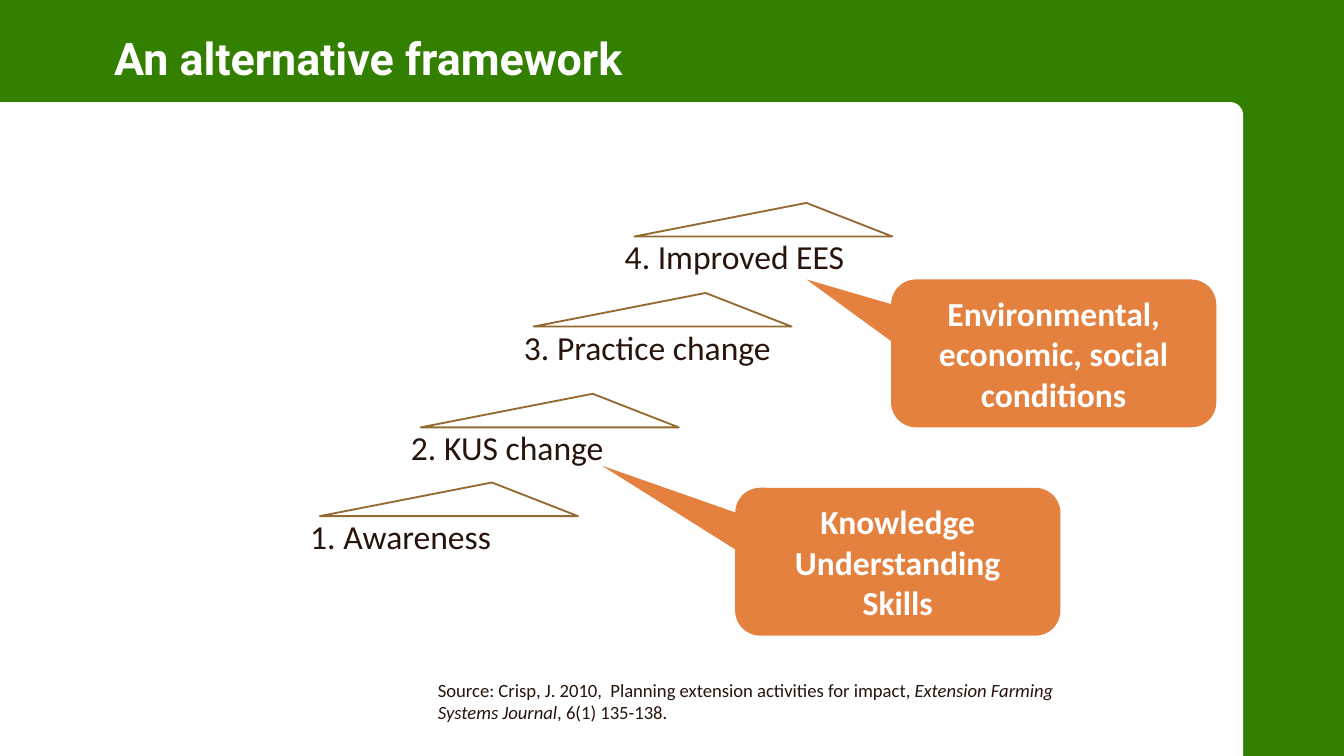
"""Build the slide on an alternative framework of four rising steps."""
from pptx import Presentation
from pptx.dml.color import RGBColor
from pptx.enum.shapes import MSO_SHAPE
from pptx.enum.text import MSO_ANCHOR, MSO_AUTO_SIZE, PP_ALIGN
from pptx.util import Inches, Pt

PANEL = MSO_SHAPE.ROUND_1_RECTANGLE
CALLOUT = MSO_SHAPE.ROUNDED_RECTANGULAR_CALLOUT
TOP, MIDDLE = MSO_ANCHOR.TOP, MSO_ANCHOR.MIDDLE
NO_FIT = MSO_AUTO_SIZE.NONE
GROW = MSO_AUTO_SIZE.SHAPE_TO_FIT_TEXT
LEFT, CENTER = PP_ALIGN.LEFT, PP_ALIGN.CENTER

GREEN, WHITE, ORANGE = "338000", "FFFFFF", "E4813F"
BROWN, INK = "946A32", "28140A"

STEPS = [
    ("1. Awareness", 2.21, 3.79, 1.55),
    ("2. KUS change", 2.96, 3.13, 1.64),
    ("3. Practice change", 3.8, 2.38, 2.05),
    ("4. Improved EES", 4.55, 1.71, 1.95),
]
CALLOUTS = [
    (["Knowledge", "Understanding", "Skills"], 5.47, 3.63, (-0.91, -0.65, 0.17)),
    (["Environmental, economic, social conditions"], 6.63, 2.08, (-0.76, -0.5, 0.17)),
]
SOURCE = [
    ("Source: Crisp, J. 2010,  Planning extension activities for impact, ", False),
    ("Extension Farming Systems Journal", True),
    (", 6(1) 135-138.", False),
]


def rgb(value):
    return RGBColor.from_string(value)


class Deck:
    def __init__(self, slide):
        self.s = slide
        fill = slide.background.fill
        fill.solid()
        fill.fore_color.rgb = rgb(GREEN)

    def style(self, p, size, color, font="Calibri", bold=False, align=LEFT):
        p.alignment = align
        p.font.name = font
        p.font.size = Pt(size)
        p.font.bold = bold
        p.font.color.rgb = rgb(color)

    def title(self, text, *box):
        sp = self.s.shapes.title
        sp.left, sp.top, sp.width, sp.height = map(Inches, box)
        tf = sp.text_frame
        tf.text = text
        tf.vertical_anchor = TOP
        tf.auto_size = NO_FIT
        p = tf.paragraphs[0]
        p.line_spacing = 1.1
        self.style(p, 24, WHITE, "Roboto", True)

    def shape(self, kind, box, color, adjustments):
        sp = self.s.shapes.add_shape(kind, *map(Inches, box))
        sp.shadow.inherit = False
        sp.fill.solid()
        sp.fill.fore_color.rgb = rgb(color)
        sp.line.fill.background()
        for i, value in enumerate(adjustments):
            sp.adjustments[i] = value
        return sp

    def text_box(self, box, wrap):
        tf = self.s.shapes.add_textbox(*map(Inches, box)).text_frame
        tf.word_wrap = wrap
        tf.auto_size = GROW
        return tf

    def step(self, label, x, y, width):
        left, base = x + 0.17, y + 0.05
        builder = self.s.shapes.build_freeform(Inches(left), Inches(base))
        corners = [(left + 1.92, base), (left + 1.28, base - 0.25)]
        builder.add_line_segments([(Inches(a), Inches(b)) for a, b in corners], close=True)
        sp = builder.convert_to_shape()
        sp.shadow.inherit = False
        sp.fill.background()
        sp.line.color.rgb = rgb(BROWN)
        sp.line.width = Pt(1)
        tf = self.text_box((x, y, width, 0.4), False)
        tf.text = label
        self.style(tf.paragraphs[0], 18, INK)

    def callout(self, lines, x, y, adjustments):
        sp = self.shape(CALLOUT, (x, y, 2.42, 1.1), ORANGE, adjustments)
        tf = sp.text_frame
        tf.word_wrap = True
        tf.vertical_anchor = MIDDLE
        tf.text = "\n".join(lines)
        for p in tf.paragraphs:
            self.style(p, 18, WHITE, bold=True, align=CENTER)

    def source(self, runs, *box):
        tf = self.text_box(box, True)
        tf.margin_right = 0
        tf.margin_top = tf.margin_bottom = Inches(0.04)
        p = tf.paragraphs[0]
        p._p.get_or_add_pPr().set("marL", str(Inches(0.28)))
        self.style(p, 10, INK)
        for text, italic in runs:
            r = p.add_run()
            r.text = text
            r.font.italic = italic


def main():
    prs = Presentation()
    prs.slide_width = Inches(10)
    prs.slide_height = prs.slide_width * 9 // 16
    deck = Deck(prs.slides.add_slide(prs.slide_layouts[5]))
    deck.title("An alternative framework", 0.75, 0.14, 5.1, 0.48)
    deck.shape(PANEL, (0, 0.76, 9.25, 4.87), WHITE, [0.02])
    for step in STEPS:
        deck.step(*step)
    deck.source(SOURCE, 2.88, 5.01, 5.2, 0.42)
    for callout in CALLOUTS:
        deck.callout(*callout)
    prs.save("out.pptx")


if __name__ == "__main__":
    main()
